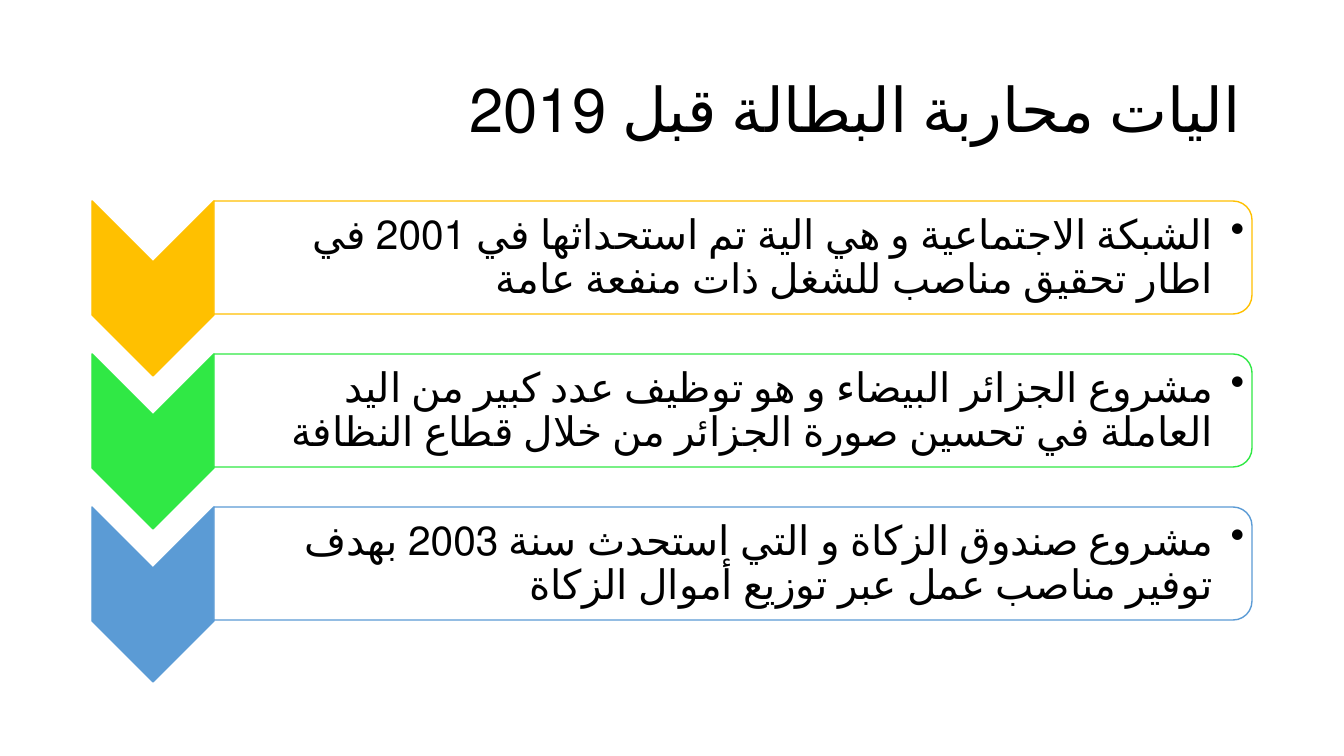
from dataclasses import dataclass

from lxml.etree import SubElement
from pptx import Presentation
from pptx.dml.color import RGBColor
from pptx.enum.lang import MSO_LANGUAGE_ID
from pptx.enum.shapes import MSO_SHAPE
from pptx.enum.text import MSO_ANCHOR, MSO_AUTO_SIZE, PP_ALIGN
from pptx.oxml.ns import qn
from pptx.util import Pt


@dataclass(frozen=True)
class Theme:
    font: str = "Calibri"
    title_size: int = 44
    item_size: int = 29
    text: str = "000000"
    panel: str = "FFFFFF"
    panel_opacity: int = 90
    accents: tuple = ("FFC000", "30E845", "5B9BD5")


@dataclass(frozen=True)
class Box:
    left: int
    top: int
    width: int
    height: int

    def emu(self):
        return [px(n) for n in (self.left, self.top, self.width, self.height)]


THEME = Theme()
EMU_PER_PX = 914400 / 100.8
TITLE = "اليات محاربة البطالة قبل 2019"
MECHANISMS = (
    "الشبكة الاجتماعية و هي الية تم استحداثها في 2001 في اطار تحقيق مناصب للشغل ذات منفعة عامة",
    "مشروع الجزائر البيضاء و هو توظيف عدد كبير من اليد العاملة في تحسين صورة الجزائر من خلال قطاع النظافة",
    "مشروع صندوق الزكاة و التي استحدث سنة 2003 بهدف توفير مناصب عمل عبر توزيع أموال الزكاة",
)


def px(count):
    return round(count * EMU_PER_PX)


def write_rtl(frame, wording, size):
    frame.word_wrap = True
    frame.auto_size = MSO_AUTO_SIZE.NONE
    frame.vertical_anchor = MSO_ANCHOR.MIDDLE
    paragraph = frame.paragraphs[0]
    paragraph.alignment = PP_ALIGN.RIGHT
    paragraph.line_spacing = 0.9
    paragraph._p.get_or_add_pPr().set("rtl", "1")
    run = paragraph.add_run()
    run.text = wording
    run.font.name = THEME.font
    run.font.size = Pt(size)
    run.font.language_id = MSO_LANGUAGE_ID.ARABIC_ALGERIA
    run.font.color.rgb = RGBColor.from_string(THEME.text)
    return paragraph


def add_bullet(paragraph, indent):
    paragraph.level = 1
    properties = paragraph._p.get_or_add_pPr()
    properties.set("marL", str(px(indent)))
    properties.set("indent", str(-px(indent)))
    SubElement(properties, qn("a:buChar")).set("char", "•")


def add_turned(slide, preset, box, fill, line):
    left, top, width, height = box.emu()
    shift = (width - height) // 2
    shape = slide.shapes.add_shape(preset, left + shift, top - shift, height, width)
    shape.rotation = 90
    shape.shadow.inherit = False
    shape.fill.solid()
    shape.fill.fore_color.rgb = RGBColor.from_string(fill)
    shape.line.color.rgb = RGBColor.from_string(line)
    shape.line.width = Pt(1)
    return shape


def place_title(slide, box):
    title = slide.shapes.title
    title.left, title.top, title.width, title.height = box.emu()
    write_rtl(title.text_frame, TITLE, THEME.title_size)


def place_mechanism(slide, box, wording, accent):
    chevron_width = 122
    panel_height = 113
    panel = Box(box.left + chevron_width, box.top, box.width - chevron_width, panel_height)
    chevron = Box(box.left, box.top, chevron_width, box.height)
    add_turned(slide, MSO_SHAPE.CHEVRON, chevron, accent, accent)

    outline = add_turned(slide, MSO_SHAPE.ROUND_2_SAME_RECTANGLE, panel, THEME.panel, accent)
    color = outline._element.spPr.find(qn("a:solidFill"))[0]
    SubElement(color, qn("a:alpha")).set("val", str(THEME.panel_opacity * 1000))

    label = Box(panel.left, panel.top + 6, panel.width - 5, panel.height - 11)
    frame = slide.shapes.add_textbox(*label.emu()).text_frame
    frame.margin_left = px(23)
    frame.margin_top = frame.margin_right = frame.margin_bottom = px(2)
    add_bullet(write_rtl(frame, wording, THEME.item_size), 31)


def place_mechanisms(slide, box):
    row_height = 175
    pitch = (box.height - row_height) // (len(MECHANISMS) - 1)
    for index, (wording, accent) in enumerate(zip(MECHANISMS, THEME.accents)):
        row = Box(box.left, box.top + index * pitch, box.width, row_height)
        place_mechanism(slide, row, wording, accent)


def main():
    deck = Presentation()
    deck.slide_width = px(1344)
    deck.slide_height = px(756)
    slide = deck.slides.add_slide(deck.slide_layouts[5])
    place_title(slide, Box(92, 40, 1160, 146))
    place_mechanisms(slide, Box(92, 201, 1160, 481))
    deck.save("out.pptx")


if __name__ == "__main__":
    main()
